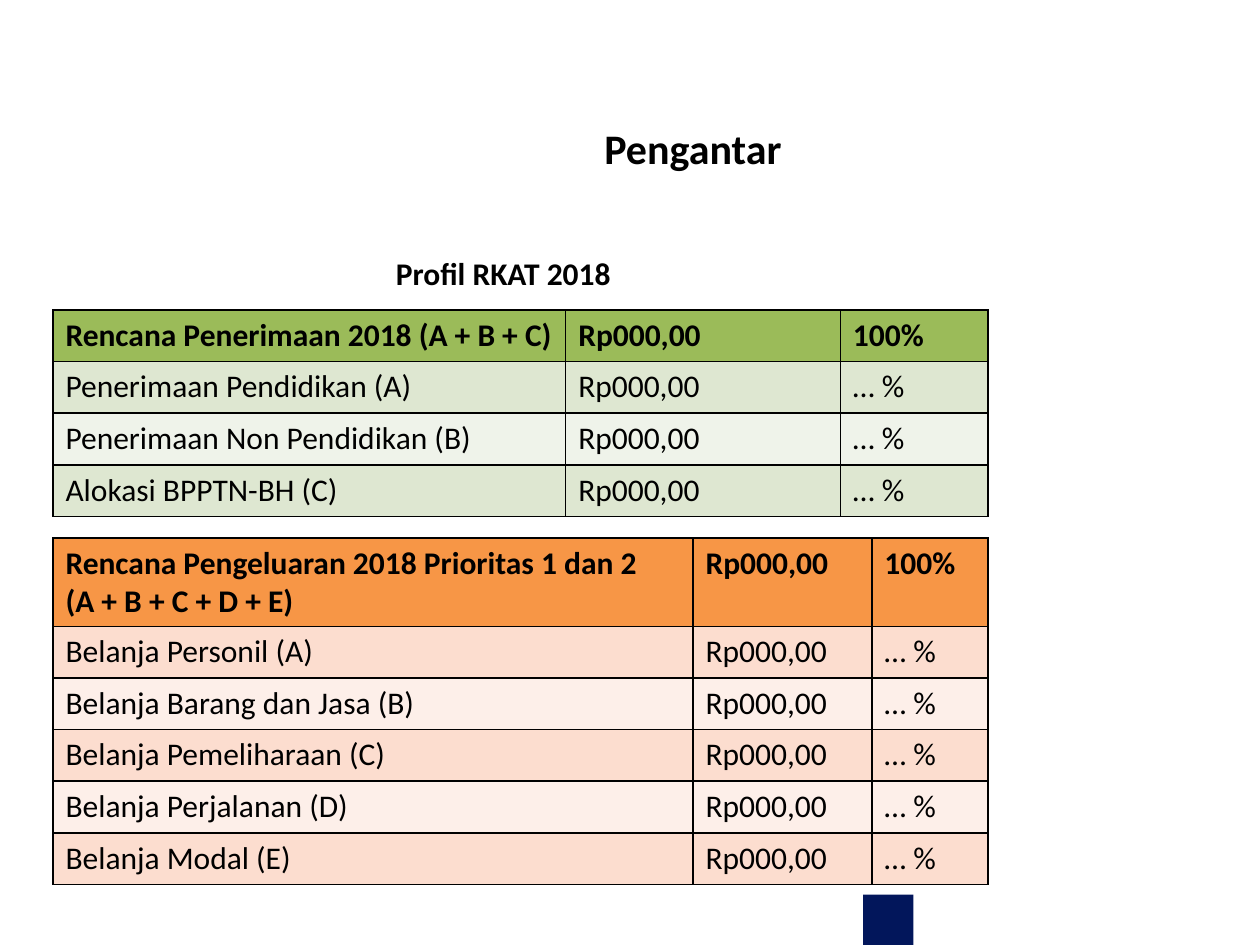
import dataclasses

import lxml.etree
import pptx
import pptx.dml.color
import pptx.enum.shapes
import pptx.enum.text
import pptx.oxml.ns
import pptx.util

Inches = pptx.util.Inches


@dataclasses.dataclass(frozen=True)
class Theme:
    font: str = "Calibri"
    title_size: int = 24
    body_size: int = 18
    text: str = "000000"
    border: str = "000000"
    border_width: int = 1
    marker: str = "02165B"
    income: tuple = ("9BBB59", "DEE7D1", "EFF3EA")
    spending: tuple = ("F79646", "FCDDCF", "FDEFE9")


THEME = Theme()
AMOUNT = "Rp000,00"
SHARE = "… %"
ROW_HEIGHT = 0.41


def rgb(color):
    return pptx.dml.color.RGBColor.from_string(color)


def format_text(text_frame, size, bold):
    for paragraph in text_frame.paragraphs:
        for run in paragraph.runs:
            run.font.name = THEME.font
            run.font.size = pptx.util.Pt(size)
            run.font.bold = bold
            run.font.color.rgb = rgb(THEME.text)


def add_heading(slide, text, left, top, width, height, size):
    box = slide.shapes.add_textbox(Inches(left), Inches(top), Inches(width), Inches(height))
    text_frame = box.text_frame
    text_frame.word_wrap = True
    text_frame.auto_size = pptx.enum.text.MSO_AUTO_SIZE.SHAPE_TO_FIT_TEXT
    text_frame.text = text
    text_frame.paragraphs[0].alignment = pptx.enum.text.PP_ALIGN.CENTER
    format_text(text_frame, size, True)


def add_marker(slide):
    shape = slide.shapes.add_shape(
        pptx.enum.shapes.MSO_SHAPE.RECTANGLE, Inches(6.85), Inches(7.1), Inches(0.4), Inches(0.4)
    )
    shape.shadow.inherit = False
    shape.fill.solid()
    shape.fill.fore_color.rgb = rgb(THEME.marker)
    shape.line.fill.background()


def add_borders(cell):
    qn = pptx.oxml.ns.qn
    properties = cell._tc.get_or_add_tcPr()
    for side in ("a:lnL", "a:lnR", "a:lnT", "a:lnB"):
        line = lxml.etree.SubElement(properties, qn(side), w=str(pptx.util.Pt(THEME.border_width)))
        fill = lxml.etree.SubElement(line, qn("a:solidFill"))
        lxml.etree.SubElement(fill, qn("a:srgbClr"), val=THEME.border)


def add_budget_table(slide, top, column_widths, header_height, fills, header, items):
    rows = [(header, AMOUNT, "100%")] + [(item, AMOUNT, SHARE) for item in items]
    heights = [header_height] + [ROW_HEIGHT] * len(items)
    table = slide.shapes.add_table(
        len(rows), len(column_widths), Inches(0.42), Inches(top),
        Inches(sum(column_widths)), Inches(sum(heights)),
    ).table
    for column, width in zip(table.columns, column_widths):
        column.width = Inches(width)
    header_fill, *band_fills = fills
    for row_index, values in enumerate(rows):
        is_header = row_index == 0
        table.rows[row_index].height = Inches(heights[row_index])
        fill = header_fill if is_header else band_fills[(row_index - 1) % 2]
        for column_index, value in enumerate(values):
            cell = table.cell(row_index, column_index)
            cell.text_frame.text = value
            format_text(cell.text_frame, THEME.body_size, is_header)
            add_borders(cell)
            cell.fill.solid()
            cell.fill.fore_color.rgb = rgb(fill)


def main():
    presentation = pptx.Presentation()
    presentation.slide_width = Inches(10)
    presentation.slide_height = Inches(7.5)
    slide = presentation.slides.add_slide(presentation.slide_layouts[6])

    add_marker(slide)
    add_heading(slide, "Pengantar", 2.25, 0.92, 6.5, 0.5, THEME.title_size)
    add_budget_table(
        slide, 2.46, (4.07, 2.18, 1.17), ROW_HEIGHT, THEME.income,
        "Rencana Penerimaan 2018 (A + B + C)",
        ("Penerimaan Pendidikan (A)", "Penerimaan Non Pendidikan (B)", "Alokasi BPPTN-BH (C)"),
    )
    add_budget_table(
        slide, 4.27, (5.08, 1.42, 0.92), 0.7, THEME.spending,
        "Rencana Pengeluaran 2018 Prioritas 1 dan 2\n(A + B + C + D + E)",
        (
            "Belanja Personil (A)",
            "Belanja Barang dan Jasa (B)",
            "Belanja Pemeliharaan (C)",
            "Belanja Perjalanan (D)",
            "Belanja Modal (E)",
        ),
    )
    add_heading(slide, "Profil RKAT 2018", 2.58, 1.97, 2.83, 0.4, THEME.body_size)
    presentation.save("out.pptx")


if __name__ == "__main__":
    main()
